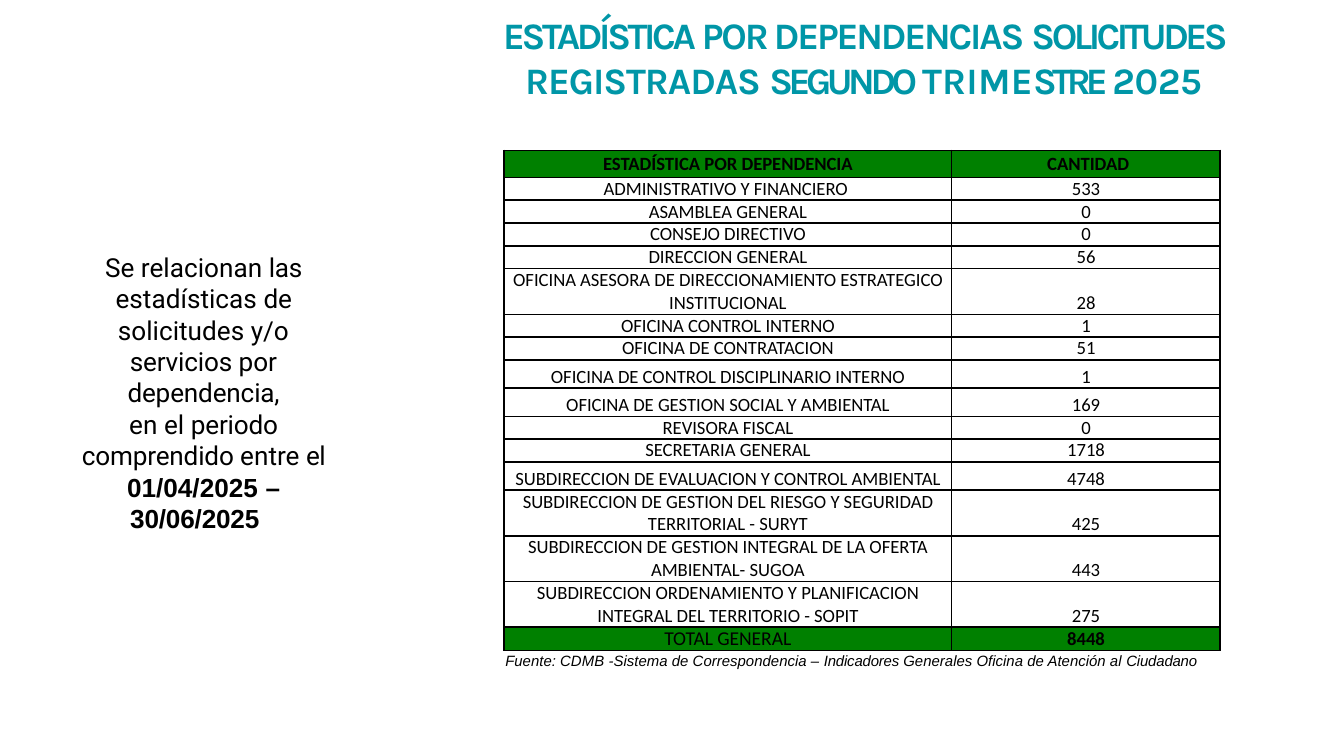
from dataclasses import dataclass
from lxml.etree import SubElement
from pptx import Presentation
from pptx.dml.color import RGBColor
from pptx.enum.text import MSO_ANCHOR, PP_ALIGN
from pptx.oxml.ns import qn
from pptx.util import Inches, Pt


@dataclass(frozen=True)
class Theme:
    teal: str = "0096A7"
    black: str = "000000"
    green: str = "008000"
    title: float = 20
    body: float = 14
    cell: float = 10
    total: float = 10.5
    note: float = 8


THEME = Theme()

TITLE = [("ESTADÍSTICA ", -1.8), ("POR DEPENDENCIAS ", -1.2),
         ("SOLICITUDES ", -1.9), ("REGISTRADAS ", -0.6),
         ("SEGUNDO ", -2.4), ("TRIME", 0.1), ("STRE ", -2.7), ("2025", -0.2)]
INTRO = [("Se relacionan ", 0), ("las ", -0.2), ("estadísticas ", 0),
         ("de ", -0.2), ("solicitudes y/o ", 0), ("servicios ", -0.1),
         ("por ", 0), ("dependencia,", -0.1)]
PERIOD = [("en el ", 0), ("periodo comprendido ", -0.1),
          ("entre ", 0), ("el ", -0.3)]
START = [("01/04/2025 ", 0), ("–", -0.5)]
FINISH = [("30/06/2025", -0.1)]
SOURCE = [("Fuente: CDMB ", 0), ("-", -0.1),
          ("Sistema de Correspondencia – ", 0), ("Indicadores ", -0.1),
          ("Generales Oficina de Atención al ", 0), ("Ciudadano", -0.1)]

HEAD = ("ESTADÍSTICA POR DEPENDENCIA", " CANTIDAD", 0.2)
ROWS = [
    ("ADMINISTRATIVO Y FINANCIERO ", 533, 0.17),
    ("ASAMBLEA GENERAL", 0, 0.17),
    ("CONSEJO DIRECTIVO", 0, 0.17),
    ("DIRECCION GENERAL", 56, 0.17),
    ("OFICINA ASESORA DE DIRECCIONAMIENTO ESTRATEGICO INSTITUCIONAL", 28, 0.34),
    ("OFICINA CONTROL INTERNO", 1, 0.17),
    ("OFICINA DE CONTRATACION", 51, 0.17),
    ("OFICINA DE CONTROL DISCIPLINARIO INTERNO", 1, 0.21),
    ("OFICINA DE GESTION SOCIAL Y AMBIENTAL", 169, 0.21),
    ("REVISORA FISCAL", 0, 0.17),
    ("SECRETARIA GENERAL", 1718, 0.17),
    ("SUBDIRECCION DE EVALUACION Y CONTROL AMBIENTAL", 4748, 0.21),
    ("SUBDIRECCION DE GESTION DEL RIESGO Y SEGURIDAD TERRITORIAL - SURYT", 425, 0.34),
    ("SUBDIRECCION DE GESTION INTEGRAL DE LA OFERTA AMBIENTAL- SUGOA", 443, 0.34),
    ("SUBDIRECCION ORDENAMIENTO Y PLANIFICACION INTEGRAL DEL TERRITORIO - SOPIT", 275, 0.34),
]
TOTAL = ("TOTAL GENERAL", sum(row[1] for row in ROWS), 0.17)


def style(font, face, size, color, bold=False, italic=False):
    font.name = face
    font.size = Pt(size)
    font.color.rgb = RGBColor.from_string(color)
    font.bold = bold
    font.italic = italic


def add_frame(slide, box, top):
    frame = slide.shapes.add_textbox(*map(Inches, box)).text_frame
    frame.word_wrap = True
    frame.margin_left = frame.margin_right = frame.margin_bottom = 0
    frame.margin_top = Inches(top)
    return frame


def add_runs(para, parts, face, size, color, **look):
    for text, gap in parts:
        run = para.add_run()
        run.text = text
        style(run.font, face, size, color, **look)
        if gap:
            run.font._element.set("spc", str(round(gap * 100)))


def indent(para, left, right):
    props = para._p.get_or_add_pPr()
    props.set("marL", str(Inches(left)))
    props.set("marR", str(Inches(right)))


def add_title(slide, box):
    para = add_frame(slide, box, 0).paragraphs[0]
    para.alignment = PP_ALIGN.CENTER
    para.line_spacing = 1.0
    add_runs(para, TITLE, "Karla", THEME.title, THEME.teal, bold=True)


def add_intro(slide, box):
    frame = add_frame(slide, box, 0.02)
    first, second, third = (frame.paragraphs[0], frame.add_paragraph(),
                            frame.add_paragraph())
    for para, left, right in ((first, 0.06, 0.05), (second, 0.11, 0.1),
                              (third, 0, 0.12)):
        para.alignment = PP_ALIGN.CENTER
        indent(para, left, right)
    for para, parts in ((first, INTRO), (second, PERIOD)):
        add_runs(para, parts, "Roboto", THEME.body, THEME.black)
    for para, parts in ((second, START), (third, FINISH)):
        add_runs(para, parts, "Arial", THEME.body, THEME.black, bold=True)


def add_source(slide, box):
    para = add_frame(slide, box, 0.02).paragraphs[0]
    indent(para, 0.01, 0)
    add_runs(para, SOURCE, "Arial", THEME.note, THEME.black, italic=True)


def add_border(cell):
    props = cell._tc.get_or_add_tcPr()
    for side in ("lnL", "lnR", "lnT", "lnB"):
        line = SubElement(props, qn(f"a:{side}"), w=str(Pt(1)))
        fill = SubElement(line, qn("a:solidFill"))
        SubElement(fill, qn("a:srgbClr"), val=THEME.black)


def fill_cell(cell, text, size, bold, middle, shade):
    cell.margin_left = cell.margin_right = 0
    cell.margin_top = cell.margin_bottom = 0
    cell.vertical_anchor = MSO_ANCHOR.MIDDLE if middle else MSO_ANCHOR.BOTTOM
    add_border(cell)
    if shade:
        cell.fill.solid()
        cell.fill.fore_color.rgb = RGBColor.from_string(THEME.green)
    else:
        cell.fill.background()
    para = cell.text_frame.paragraphs[0]
    para.text = str(text)
    para.alignment = PP_ALIGN.CENTER
    style(para.runs[0].font, "Calibri", size, THEME.black, bold)


def add_grid(slide, box):
    data = [HEAD, *ROWS, TOTAL]
    table = slide.shapes.add_table(len(data), 2, *map(Inches, box)).table
    table.first_row = table.horz_banding = False
    for col, share in zip(table.columns, (0.625, 0.375)):
        col.width = Inches(box[2] * share)
    for at, (label, count, height) in enumerate(data):
        head, last = at == 0, at == len(data) - 1
        table.rows[at].height = Inches(height)
        size = THEME.total if last else THEME.cell
        fill_cell(table.cell(at, 0), label, size, head, head or last, head or last)
        fill_cell(table.cell(at, 1), count, THEME.cell, head or last, head, head or last)


def main():
    deck = Presentation()
    deck.slide_width = Inches(10)
    deck.slide_height = deck.slide_width * 9 // 16
    slide = deck.slides.add_slide(deck.slide_layouts[6])
    add_title(slide, (3.43, 0.09, 5.99, 1.03))
    add_source(slide, (3.75, 4.83, 5.33, 0.15))
    add_intro(slide, (0.48, 1.85, 2.06, 1.9))
    add_grid(slide, (3.75, 1.12, 5.33, 3.72))
    deck.save("out.pptx")


if __name__ == "__main__":
    main()
